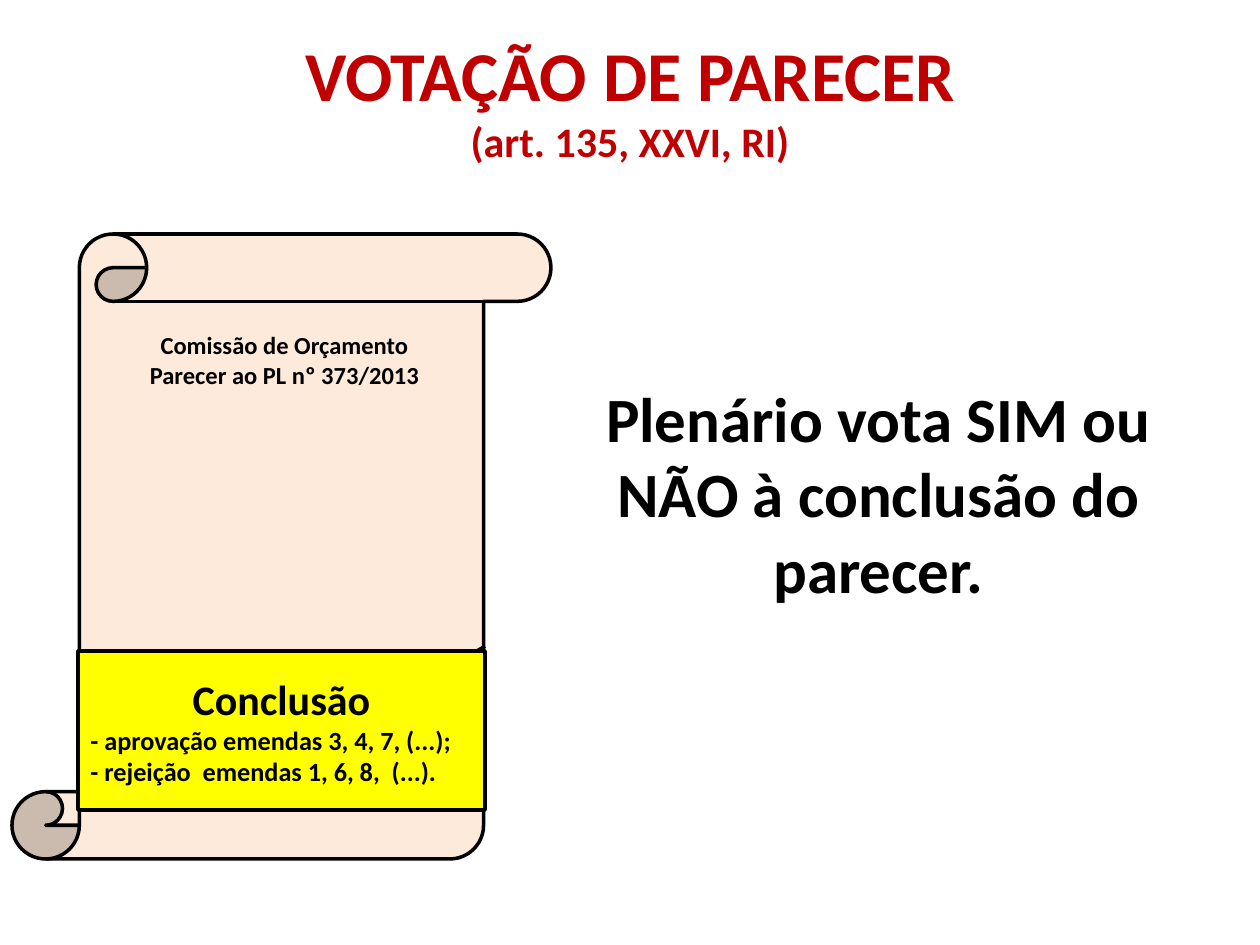
from pptx import Presentation
from pptx.dml.color import RGBColor
from pptx.enum.shapes import MSO_SHAPE as Shape
from pptx.enum.text import MSO_ANCHOR as Anchor, MSO_AUTO_SIZE as AutoSize, PP_ALIGN as Align
from pptx.util import Emu, Pt

PX_PER_INCH = 126
BLACK = "000000"
RED = "C00000"


def px(length):
    return Emu(round(length * 914400 / PX_PER_INCH))


def color(hex_value):
    return RGBColor.from_string(hex_value)


def add_run(paragraph, text, size, hex_value=BLACK):
    run = paragraph.add_run()
    run.text = text
    run.font.name = "Calibri"
    run.font.size = Pt(size)
    run.font.bold = True
    run.font.color.rgb = color(hex_value)


def write_lines(frame, lines):
    for index, (text, size, align) in enumerate(lines):
        paragraph = frame.paragraphs[0] if index == 0 else frame.add_paragraph()
        paragraph.alignment = align
        add_run(paragraph, text, size)


def set_title(slide, box, heading, reference):
    title = slide.shapes.title
    title.left, title.top, title.width, title.height = map(px, box)
    title.text_frame.vertical_anchor = Anchor.MIDDLE
    paragraph = title.text_frame.paragraphs[0]
    paragraph.alignment = Align.CENTER
    add_run(paragraph, heading, 40, RED)
    paragraph.add_line_break()
    add_run(paragraph, reference, 24, RED)


def add_text(slide, box, lines, wrap=True):
    frame = slide.shapes.add_textbox(*map(px, box)).text_frame
    frame.word_wrap = wrap
    write_lines(frame, lines)
    return frame


def add_outlined(slide, kind, box, fill):
    shape = slide.shapes.add_shape(kind, *map(px, box))
    shape.shadow.inherit = False
    shape.fill.solid()
    shape.fill.fore_color.rgb = color(fill)
    shape.line.color.rgb = color(BLACK)
    shape.line.width = Pt(2)
    return shape


def main():
    deck = Presentation()
    deck.slide_width, deck.slide_height = px(1260), px(945)
    slide = deck.slides.add_slide(deck.slide_layouts[5])

    set_title(slide, (243, 16, 774, 166), "VOTAÇÃO DE PARECER", "(art. 135, XXVI, RI)")

    statement = add_text(slide, (551, 373, 655, 258), [
        ("Plenário vota SIM ou NÃO à conclusão do parecer.", 36, Align.CENTER),
    ])
    statement.paragraphs[0].space_before = Pt(7.2)

    add_outlined(slide, Shape.VERTICAL_SCROLL, (12, 234, 539, 625), "FDEADA")
    report = add_text(slide, (136, 324, 297, 72), [
        ("Comissão de Orçamento", 14, Align.CENTER),
        ("Parecer ao PL nº 373/2013", 14, Align.CENTER),
    ], wrap=False)
    report.auto_size = AutoSize.SHAPE_TO_FIT_TEXT

    conclusion = add_outlined(slide, Shape.LINE_CALLOUT_1, (78, 651, 407, 159), "FFFF00")
    for index, value in enumerate((0, 0.98, -0.03, 1)):
        conclusion.adjustments[index] = value
    conclusion.text_frame.vertical_anchor = Anchor.MIDDLE
    write_lines(conclusion.text_frame, [
        ("Conclusão", 24, Align.CENTER),
        ("- aprovação emendas 3, 4, 7, (...);", 15, Align.JUSTIFY),
        ("- rejeição  emendas 1, 6, 8,  (...).", 15, Align.JUSTIFY),
    ])

    deck.save("out.pptx")


if __name__ == "__main__":
    main()
